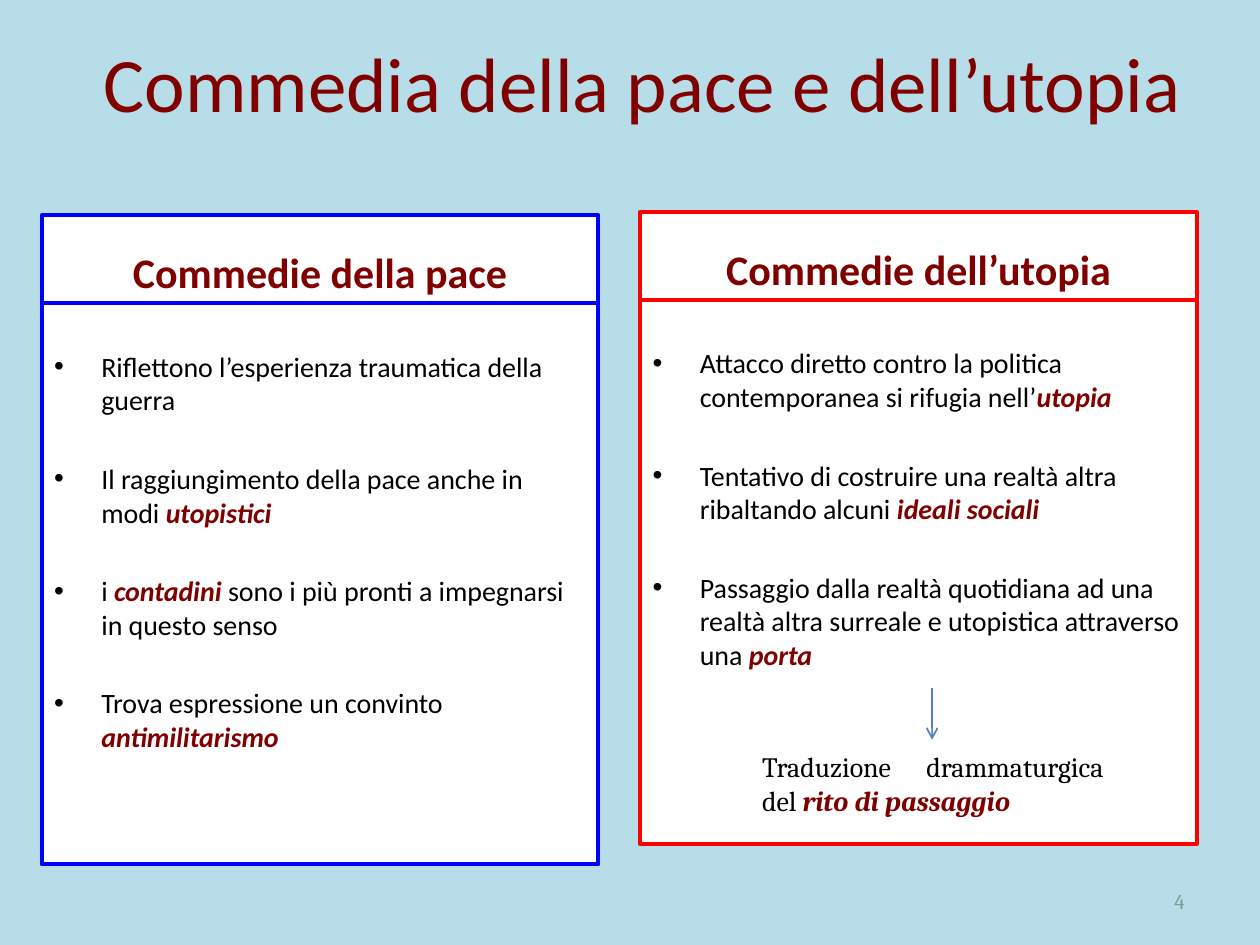
from lxml import etree
from pptx import Presentation
from pptx.dml.color import RGBColor
from pptx.enum import shapes, text
from pptx.oxml.ns import qn
from pptx.util import Pt

MAROON, BLACK, WHITE = "800000", "000000", "FFFFFF"
ALIGN, ANCHOR = text.PP_ALIGN, text.MSO_ANCHOR


def colour(hex_code):
    return RGBColor.from_string(hex_code)


def add_bullet(paragraph, indent=27):
    props = paragraph._p.get_or_add_pPr()
    props.set("marL", str(Pt(indent)))
    props.set("indent", str(-Pt(indent)))
    etree.SubElement(props, qn("a:buFont"), typeface="Arial")
    etree.SubElement(props, qn("a:buChar"), char="•")


def write(frame, paragraphs, size=16, font="Calibri", ink=BLACK, bold=False,
          align=ALIGN.LEFT, anchor=ANCHOR.TOP, bullets=False, gap=0, top=3.6):
    """Fill a frame; words between asterisks are bold, italic and maroon."""
    frame.word_wrap = True
    frame.vertical_anchor = anchor
    frame.margin_top = Pt(top)
    for i, content in enumerate(paragraphs):
        paragraph = frame.add_paragraph() if i else frame.paragraphs[0]
        paragraph.alignment = align
        paragraph.space_before = Pt(gap if i else 0)
        if bullets:
            add_bullet(paragraph)
        for j, part in enumerate(content.split("*")):
            if not part:
                continue
            stressed = j % 2 == 1
            run = paragraph.add_run()
            run.text = part
            run.font.name, run.font.size = font, Pt(size)
            run.font.bold, run.font.italic = bold or stressed, stressed
            run.font.color.rgb = colour(MAROON if stressed else ink)


def add_label(slide, box, content, **style):
    label = slide.shapes.add_textbox(*map(Pt, box))
    write(label.text_frame, [content], **style)


def add_panel(slide, box, border):
    panel = slide.shapes.add_shape(shapes.MSO_SHAPE.RECTANGLE, *map(Pt, box))
    panel.shadow.inherit = False
    panel.fill.solid()
    panel.fill.fore_color.rgb = colour(WHITE)
    panel.line.color.rgb = colour(border)
    panel.line.width = Pt(2.25)
    return panel.text_frame


def add_column(slide, box, border, heading, points, head_height=50.4):
    """Heading panel on top of a panel of bullet points."""
    left, top, width, height = box
    head = add_panel(slide, (left, top, width, head_height), border)
    write(head, [heading], size=24, ink=MAROON, bold=True,
          align=ALIGN.CENTER, anchor=ANCHOR.BOTTOM)
    body = add_panel(slide, (left, top + head_height, width, height - head_height), border)
    write(body, points, bullets=True, gap=25.7, top=26.3)


def add_rite_note(slide, box):
    """Arrow pointing down to the closing remark."""
    left, top, width, height = box
    arrow_x = left + width / 2 - 0.5
    arrow = slide.shapes.add_connector(
        shapes.MSO_CONNECTOR.STRAIGHT, Pt(arrow_x), Pt(top), Pt(arrow_x), Pt(top + 29.5))
    arrow.line.color.rgb = colour("4F81BD")
    arrow.line.width = Pt(1)
    etree.SubElement(arrow.line._get_or_add_ln(), qn("a:tailEnd"), type="arrow")
    etree.SubElement(arrow._element.spPr, qn("a:effectLst"))
    add_label(slide, (left, top + 31.7, width, height - 31.7),
              "Traduzione drammaturgica del *rito di passaggio*",
              font="Cambria", align=ALIGN.JUSTIFY)


def main():
    deck = Presentation()
    deck.slide_width, deck.slide_height = Pt(720), Pt(540)
    slide = deck.slides.add_slide(deck.slide_layouts[6])
    slide.background.fill.solid()
    slide.background.fill.fore_color.rgb = colour("B7DEE8")

    # Title
    add_label(slide, (36, 1.5, 663, 90), "Commedia della pace e dell’utopia",
              size=44, ink=MAROON, align=ALIGN.CENTER, anchor=ANCHOR.MIDDLE)

    # Two kinds of comedy
    add_column(slide, (23.8, 123, 318.2, 371), "0000FF", "Commedie della pace", [
        "Riflettono l’esperienza traumatica della guerra",
        "Il raggiungimento della pace anche in modi *utopistici*",
        "i *contadini* sono i più pronti a impegnarsi in questo senso",
        "Trova espressione un convinto *antimilitarismo*",
    ])
    add_column(slide, (365.8, 121, 318.2, 361.4), "FF0000", "Commedie dell’utopia", [
        "Attacco diretto contro la politica contemporanea si rifugia nell’*utopia*",
        "Tentativo di costruire una realtà altra ribaltando alcuni *ideali sociali*",
        "Passaggio dalla realtà quotidiana ad una realtà altra surreale e utopistica "
        "attraverso una *porta*",
    ])
    add_rite_note(slide, (428.4, 393.1, 209.5, 77.8))

    # Slide number
    add_label(slide, (516, 500.5, 168, 28.8), "4", size=12, font="Cambria",
              ink="7C999A", align=ALIGN.RIGHT, anchor=ANCHOR.MIDDLE)
    deck.save("out.pptx")


if __name__ == "__main__":
    main()
